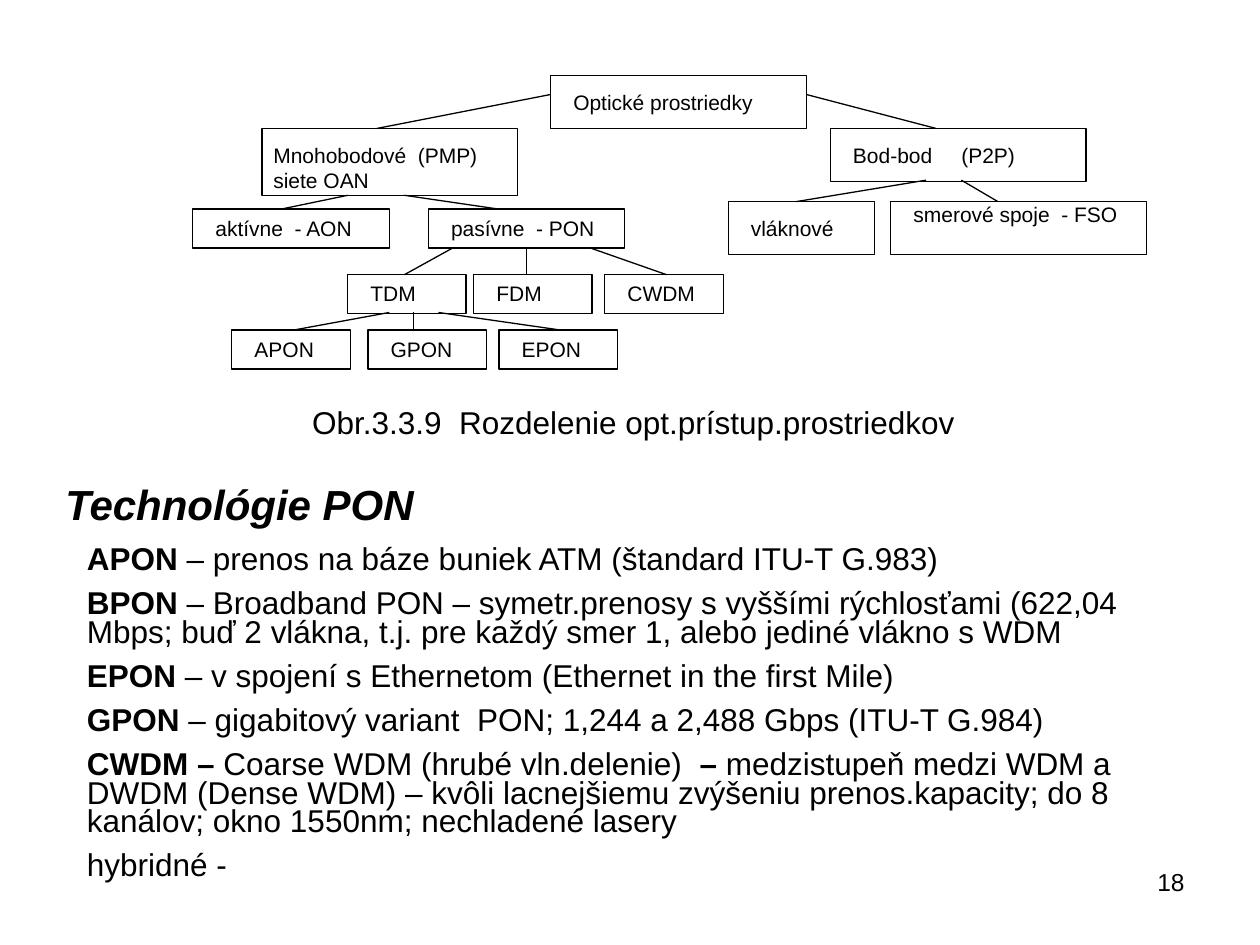
from dataclasses import dataclass

from lxml import etree
from pptx import Presentation
from pptx.dml.color import RGBColor
from pptx.enum.shapes import MSO_CONNECTOR, MSO_SHAPE
from pptx.enum.text import MSO_ANCHOR, MSO_AUTO_SIZE, PP_ALIGN
from pptx.oxml.ns import qn
from pptx.util import Inches, Pt

RECTANGLE = MSO_SHAPE.RECTANGLE
STRAIGHT = MSO_CONNECTOR.STRAIGHT
TOP = MSO_ANCHOR.TOP
NO_FIT = MSO_AUTO_SIZE.NONE
LEFT, RIGHT = PP_ALIGN.LEFT, PP_ALIGN.RIGHT


@dataclass(frozen=True)
class Theme:
    """Colours, font and type sizes of the slide."""
    ink: RGBColor = RGBColor(0, 0, 0)
    font: str = "Arial"
    title: Pt = Pt(24)
    body: Pt = Pt(18)
    number: Pt = Pt(14)
    node: Pt = Pt(12)
    line: Pt = Pt(0.75)
    gap: Pt = Pt(9)


THEME = Theme()

ROOT_Y, BRANCH_Y, KIND_Y, LINK_Y, MULTIPLEX_Y, STANDARD_Y = 0.6, 1.02, 1.66, 1.6, 2.18, 2.62
WIDE, MEDIUM, NARROW = 2.03, 1.56, 0.94
TALL, SHORT = 0.42, 0.31
INDENT = 0.18

# (text, left, top, width, height, left inset, top inset)
NODES = [
    ("Optické prostriedky", 4.37, ROOT_Y, WIDE, TALL, INDENT, 0.11),
    ("Bod-bod     (P2P)", 6.59, BRANCH_Y, WIDE, TALL, INDENT, 0.11),
    ("Mnohobodové  (PMP)\nsiete OAN", 2.08, BRANCH_Y, WIDE, 0.53, 0.09, 0.11),
    ("vláknové", 5.78, LINK_Y, 1.16, TALL, INDENT, 0.11),
    ("smerové spoje  - FSO", 7.07, LINK_Y, WIDE, TALL, INDENT, 0),
    ("pasívne  - PON", 3.4, KIND_Y, MEDIUM, SHORT, INDENT, 0.05),
    ("aktívne  - AON", 1.53, KIND_Y, MEDIUM, SHORT, INDENT, 0.05),
    *[(text, left, top, NARROW, SHORT, INDENT, 0.05) for text, left, top in [
        ("TDM", 2.76, MULTIPLEX_Y), ("FDM", 3.76, MULTIPLEX_Y), ("CWDM", 4.8, MULTIPLEX_Y),
        ("APON", 1.84, STANDARD_Y), ("GPON", 2.92, STANDARD_Y), ("EPON", 3.96, STANDARD_Y),
    ]],
]

# (start height, end height, pairs of start and end positions)
BRANCHES = [
    (0.75, BRANCH_Y, [(4.37, 2.99), (6.4, 7.43)]),
    (1.55, KIND_Y, [(2.76, 2.23), (3.21, 3.96)]),
    (1.97, MULTIPLEX_Y, [(3.59, 3.21), (4.18, 4.18), (4.69, 5.29)]),
    (2.48, STANDARD_Y, [(3.09, 2.33), (3.28, 3.28), (3.48, 4.45)]),
    (1.43, LINK_Y, [(7.35, 6.32), (7.63, 7.92)]),
]

TECHNOLOGIES = [
    [("APON", True), (" – prenos na báze buniek ATM (štandard ITU-T G.983)", False)],
    [("BPON", True), (" – Broadband PON – symetr.prenosy s vyššími rýchlosťami (622,04 Mbps; "
                      "buď 2 vlákna, t.j. pre každý smer 1, alebo jediné vlákno s WDM", False)],
    [("EPON", True), (" – v spojení s Ethernetom (Ethernet in the first Mile)", False)],
    [("GPON", True), (" – gigabitový variant  PON; 1,244 a 2,488 Gbps (ITU-T G.984)", False)],
    [("CWDM – ", True), ("Coarse WDM (hrubé vln.delenie) ", False), (" – ", True),
     ("medzistupeň medzi WDM a DWDM (Dense WDM) – kvôli lacnejšiemu zvýšeniu "
      "prenos.kapacity; do 8 kanálov; okno 1550nm; nechladené lasery", False)],
    [("hybridné -", False)],
]


def set_font(paragraph, size):
    """Give a paragraph the theme font at the given size."""
    paragraph.font.name = THEME.font
    paragraph.font.size = size
    paragraph.font.color.rgb = THEME.ink


def place(shape, left, top, width, height):
    """Move and size a placeholder and anchor its text at the top."""
    shape.left, shape.top = Inches(left), Inches(top)
    shape.width, shape.height = Inches(width), Inches(height)
    frame = shape.text_frame
    frame.word_wrap = True
    frame.auto_size = NO_FIT
    frame.vertical_anchor = TOP
    return frame


def add_branch(slide, start, end):
    """Draw a thin line between two points."""
    line = slide.shapes.add_connector(STRAIGHT, *map(Inches, (*start, *end)))
    line.line.color.rgb = THEME.ink
    line.line.width = THEME.line
    etree.SubElement(line._element.spPr, qn("a:effectLst"))


def add_node(slide, text, left, top, width, height, left_inset, top_inset):
    """Draw an outlined box of the tree with its label."""
    node = slide.shapes.add_shape(RECTANGLE, *map(Inches, (left, top, width, height)))
    node.shadow.inherit = False
    node.fill.background()
    node.line.color.rgb = THEME.ink
    node.line.width = THEME.line
    frame = node.text_frame
    frame.word_wrap = False
    frame.vertical_anchor = TOP
    frame.margin_left, frame.margin_top = Inches(left_inset), Inches(top_inset)
    frame.margin_right = frame.margin_bottom = 0
    frame.text = text
    for paragraph in frame.paragraphs:
        paragraph.alignment = LEFT
        set_font(paragraph, THEME.node)


def add_label(slide, text, box, size, alignment):
    """Add a one-line text box."""
    frame = slide.shapes.add_textbox(*map(Inches, box)).text_frame
    frame.word_wrap = True
    frame.text = text
    paragraph = frame.paragraphs[0]
    paragraph.alignment = alignment
    set_font(paragraph, size)


def fill_title(title):
    """Write the heading in the title placeholder."""
    paragraph = place(title, 0.35, 3.75, 3.7, 0.5).paragraphs[0]
    paragraph.alignment = LEFT
    set_font(paragraph, THEME.title)
    paragraph.font.bold = True
    space = paragraph.add_run()
    space.text = " "
    space.font.size = THEME.body
    heading = paragraph.add_run()
    heading.text = "Technológie PON"
    heading.font.italic = True


def fill_body(body):
    """Write the list of technologies in the body placeholder."""
    frame = place(body, 0.59, 4.3, 8.82, 2.89)
    for index, runs in enumerate(TECHNOLOGIES):
        paragraph = frame.add_paragraph() if index else frame.paragraphs[0]
        properties = paragraph._p.get_or_add_pPr()
        properties.set("marL", "0")
        properties.set("indent", "0")
        etree.SubElement(properties, qn("a:buNone"))
        paragraph.line_spacing = 0.75
        paragraph.space_before = THEME.gap if index else Pt(0)
        set_font(paragraph, THEME.body)
        for text, bold in runs:
            run = paragraph.add_run()
            run.text = text
            run.font.bold = bold


def main():
    """Build and save the slide."""
    presentation = Presentation()
    presentation.slide_width, presentation.slide_height = Inches(10), Inches(7.5)
    slide = presentation.slides.add_slide(presentation.slide_layouts[1])
    fill_title(slide.shapes.title)
    fill_body(slide.placeholders[1])
    add_label(slide, "Obr.3.3.9  Rozdelenie opt.prístup.prostriedkov",
              (2.38, 3.15, 5.5, 0.4), THEME.body, LEFT)
    add_label(slide, "18", (7.17, 6.83, 2.33, 0.52), THEME.number, RIGHT)
    for node in NODES:
        add_node(slide, *node)
    for start_y, end_y, pairs in BRANCHES:
        for start_x, end_x in pairs:
            add_branch(slide, (start_x, start_y), (end_x, end_y))
    presentation.save("out.pptx")


if __name__ == "__main__":
    main()
